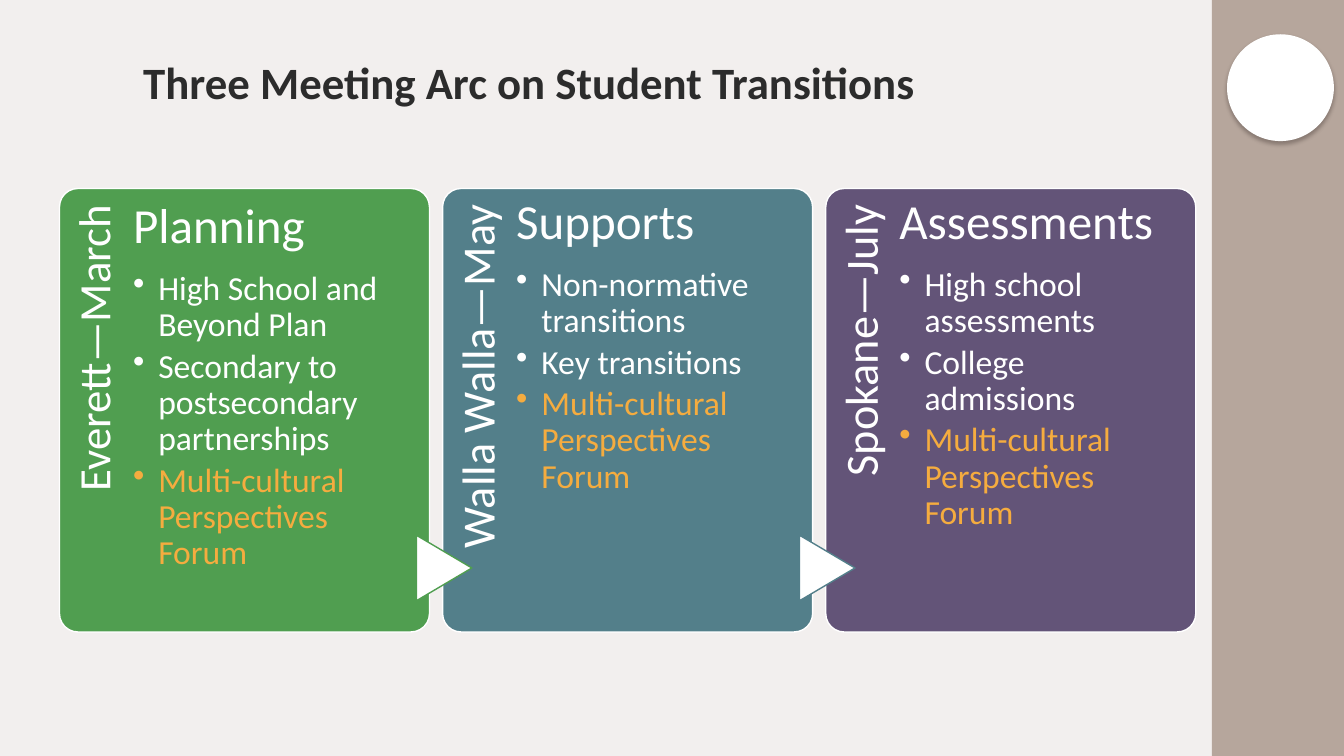
"""Build the slide on the three meetings about student transitions."""
import pptx
import pptx.dml.color
import pptx.enum.shapes
import pptx.enum.text
import pptx.oxml
import pptx.oxml.ns
import pptx.util

TITLE = "Three Meeting Arc on Student Transitions"
FORUM = "Multi-cultural Perspectives Forum"
CARDS = [
    {"place": "Everett—March", "size": 32, "pad": 0.13, "fill": "green", "head": "Planning",
     "items": ["High School and Beyond Plan", "Secondary to postsecondary partnerships", FORUM]},
    {"place": "Walla Walla—May", "size": 33, "pad": 0.09, "fill": "teal", "head": "Supports",
     "items": ["Non-normative transitions", "Key transitions", FORUM]},
    {"place": "Spokane—July", "size": 33, "pad": 0.09, "fill": "plum", "head": "Assessments",
     "items": ["High school assessments", "College admissions", FORUM]},
]
COLORS = {"back": "F2EFEE", "band": "B6A69C", "white": "FFFFFF", "dark": "2C2C2C",
          "green": "509E50", "teal": "537F8A", "plum": "635478", "gold": "F5AC3F",
          "shade": "443834"}
FONT = "Calibri"
LEFT, TOP, WIDTH, HEIGHT, STEP = 0.59, 1.87, 3.67, 4.4, 3.8

Inches, Pt = pptx.util.Inches, pptx.util.Pt
KIND = pptx.enum.shapes.MSO_SHAPE
ALIGN = pptx.enum.text.PP_ALIGN
ANCHOR = pptx.enum.text.MSO_ANCHOR


def color(name):
    return pptx.dml.color.RGBColor.from_string(COLORS[name])


def place(*box):
    return [Inches(n) for n in box]


def draw(kind, box, fill, line=None):
    shape = slide.shapes.add_shape(kind, *place(*box))
    shape.shadow.inherit = False
    shape.fill.solid()
    shape.fill.fore_color.rgb = color(fill)
    if line:
        shape.line.color.rgb = color(line)
        shape.line.width = Pt(1)
    else:
        shape.line.fill.background()
    return shape


def add_box(box, top, right=0):
    shape = slide.shapes.add_textbox(*place(*box))
    frame = shape.text_frame
    frame.word_wrap = True
    frame.margin_left = frame.margin_bottom = 0
    frame.margin_top, frame.margin_right = Inches(top), Inches(right)
    return shape


def style(para, text, size, tint="white", space=0.9, after=0, bold=False):
    para.text = text
    para.line_spacing = space
    para.space_after = Pt(round(size * after, 1))
    font = para.font
    font.name, font.size, font.bold = FONT, Pt(size), bold
    font.color.rgb = color(tint)


def bullet(para):
    props = para._p.get_or_add_pPr()
    props.set("marL", str(Inches(0.25)))
    props.set("indent", str(Inches(-0.25)))
    mark = pptx.oxml.parse_xml(f'<a:buChar {pptx.oxml.ns.nsdecls("a")} char="•"/>')
    props.append(mark)


def cast(shape):
    effect = shape._element.spPr.find(pptx.oxml.ns.qn("a:effectLst"))
    effect.append(pptx.oxml.parse_xml(
        f'<a:outerShdw {pptx.oxml.ns.nsdecls("a")} blurRad="{Pt(3)}" dist="{Pt(2)}" dir="5400000">'
        f'<a:srgbClr val="{COLORS["shade"]}"><a:alpha val="40000"/></a:srgbClr></a:outerShdw>'))


def add_card(index, card):
    left = LEFT + index * STEP
    panel = draw(KIND.ROUNDED_RECTANGLE, (left, TOP, WIDTH, HEIGHT), card["fill"], "white")
    panel.adjustments[0] = 0.05

    side = add_box((left - 1.44, 3.31, 3.61, 0.73), 0.12, 0.16)
    side.rotation = 270
    label = side.text_frame.paragraphs[0]
    style(label, card["place"], card["size"])
    label.alignment = ALIGN.RIGHT

    if index:
        arrow = draw(KIND.FLOWCHART_EXTRACT, (left - 0.31, 5.36, 0.65, 0.55),
                     "white", CARDS[index - 1]["fill"])
        arrow.rotation = 90

    frame = add_box((left + 0.73, TOP, 2.73, HEIGHT), card["pad"]).text_frame
    style(frame.paragraphs[0], card["head"], 35, after=0.35)
    for item in card["items"]:
        para = frame.add_paragraph()
        para.level = 1
        bullet(para)
        style(para, item, 24, "gold" if item == FORUM else "white", after=0.15)


deck = pptx.Presentation()
deck.slide_width, deck.slide_height = Inches(13.33), Inches(7.5)
slide = deck.slides.add_slide(deck.slide_layouts[5])
slide.background.fill.solid()
slide.background.fill.fore_color.rgb = color("back")

draw(KIND.RECTANGLE, (12.02, 0, 1.31, 7.5), "band")
cast(draw(KIND.OVAL, (12.17, 0.34, 1.06, 1.06), "white"))

title = slide.shapes.title
title.left, title.top, title.width, title.height = place(1.32, 0.31, 10, 1.09)
title.text_frame.vertical_anchor = ANCHOR.MIDDLE
style(title.text_frame.paragraphs[0], TITLE, 32, "dark", 0.85, bold=True)
title.text_frame.paragraphs[0].alignment = ALIGN.LEFT

for index, card in enumerate(CARDS):
    add_card(index, card)

deck.save("out.pptx")
